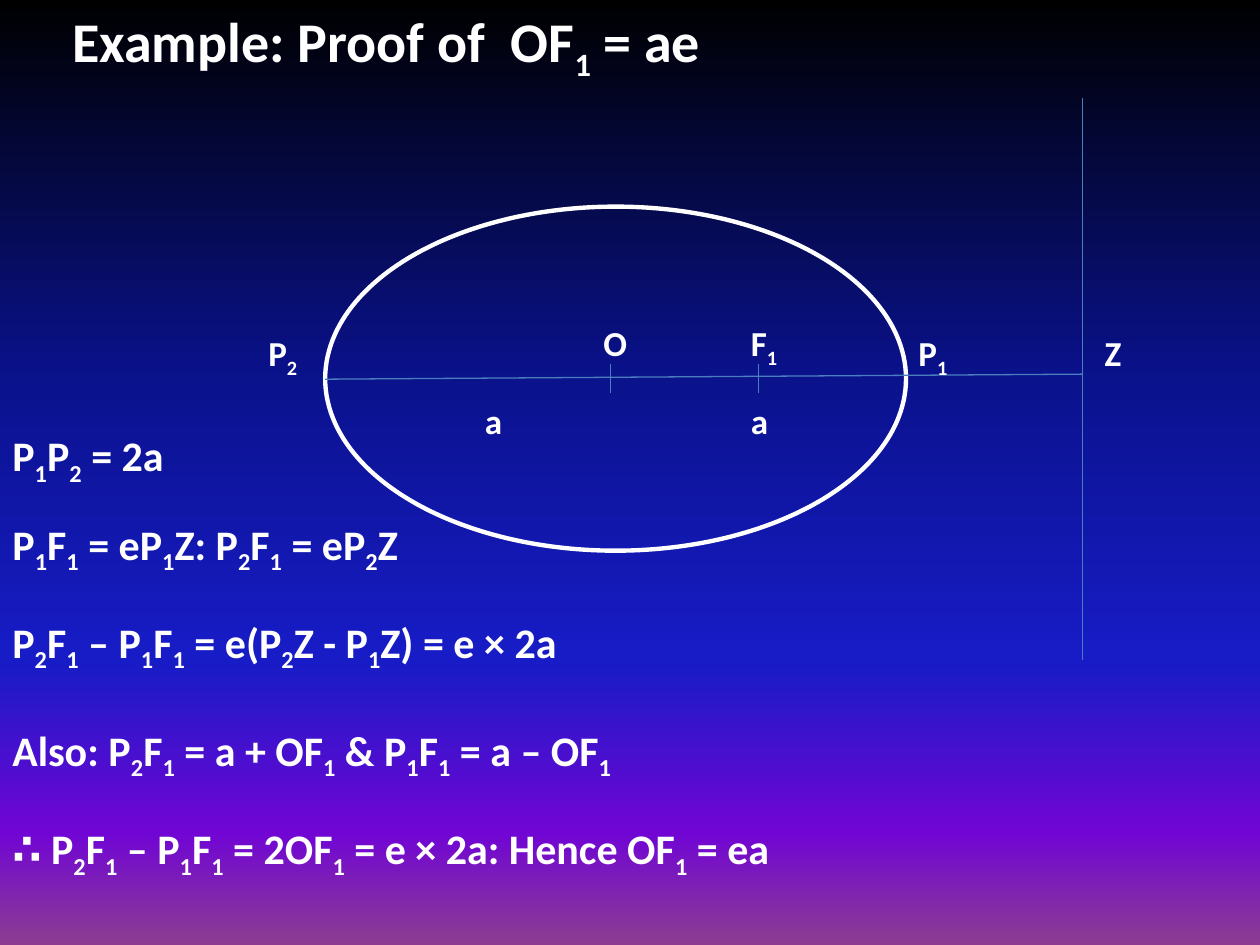
from dataclasses import dataclass

from lxml import etree
from pptx import Presentation
from pptx import util as u
from pptx.dml.color import RGBColor
from pptx.enum import shapes, text
from pptx.oxml.ns import qn


@dataclass(frozen=True)
class Theme:
    font: str = "Calibri"
    ink: str = "FFFFFF"
    rule: str = "4B7EBC"
    title_size: float = 32
    step_size: float = 24
    label_size: float = 20
    outline: float = 2.5
    hairline: float = 0.75
    # (position in percent, colour), from top to bottom
    backdrop: tuple = ((0, "000000"), (40, "0A128C"), (70, "181CC7"),
                       (88, "7005D4"), (100, "8C3D91"))


@dataclass(frozen=True)
class Label:
    """Text at a place; an underscore lowers the character after it."""
    words: str
    left: float
    top: float
    width: float


@dataclass(frozen=True)
class Segment:
    x1: float
    y1: float
    x2: float
    y2: float


THEME = Theme()

TITLE = Label("Example: Proof of  OF_1 = ae", 34, 0, 378)

POINT_LABELS = [
    Label("O", 337.7, 180, 28),
    Label("F_1", 422, 180, 30.5),
    Label("P_1", 517.7, 185.8, 32.5),
    Label("P_2", 146.2, 185.8, 32.5),
    Label("Z", 624.2, 185.8, 24.5),
    Label("a", 270, 224.6, 24.5),
    Label("a", 422, 224.6, 24.5),
]

PROOF_STEPS = [
    Label("P_1P_2 = 2a", 0, 242, 103.7),
    Label("P_1F_1 = eP_1Z: P_2F_1 = eP_2Z", 0, 292.5, 243.4),
    Label("P_2F_1 – P_1F_1 = e(P_2Z - P_1Z) = e × 2a", 0, 348.5, 352),
    Label("Also: P_2F_1 = a + OF_1 & P_1F_1 = a – OF_1", 0, 410.4, 398.2),
    Label("∴ P_2F_1 – P_1F_1 = 2OF_1 = e × 2a: Hence OF_1 = ea", 0, 466.5, 466.6),
]

DIRECTRIX = Segment(618.5, 56.2, 618.5, 377.3)
AXIS = Segment(185.8, 216.7, 618.5, 213.8)
TICKS = [Segment(x, 208.1, x, 224.6) for x in (348.8, 433.4)]


def paint_backdrop(s) -> None:
    fill = s.background.fill
    fill.gradient()
    fill.gradient_angle = 270
    stops = next(s.element.iter(qn("a:gsLst")))
    for old in list(stops):
        stops.remove(old)
    for percent, colour in THEME.backdrop:
        gs = etree.SubElement(stops, qn("a:gs"), pos=str(percent * 1000))
        etree.SubElement(gs, qn("a:srgbClr"), val=colour)


def write(tf, words: str, *, size: float, colour: str = THEME.ink,
          bold: bool = True) -> None:
    """Fill a frame with one line, lowering marked characters."""
    tf.word_wrap = False
    tf.auto_size = text.MSO_AUTO_SIZE.SHAPE_TO_FIT_TEXT
    tf.vertical_anchor = text.MSO_ANCHOR.TOP
    p = tf.paragraphs[0]
    p.alignment = text.PP_ALIGN.LEFT
    first, *rest = words.split("_")
    pieces = [(first, False)]
    for part in rest:
        pieces += [(part[0], True), (part[1:], False)]
    for piece, lowered in pieces:
        if not piece:
            continue
        r = p.add_run()
        r.text = piece
        r.font.name = THEME.font
        r.font.size = u.Pt(size)
        r.font.bold = bold
        r.font.color.rgb = RGBColor.from_string(colour)
        if lowered:
            r._r.get_or_add_rPr().set("baseline", "-25000")


def add_label(s, label: Label, size: float, height: float) -> None:
    sp = s.shapes.add_textbox(u.Pt(label.left), u.Pt(label.top),
                              u.Pt(label.width), u.Pt(height))
    write(sp.text_frame, label.words, size=size)


def add_segment(s, seg: Segment) -> None:
    line = s.shapes.add_connector(shapes.MSO_CONNECTOR.STRAIGHT,
                                  u.Pt(seg.x1), u.Pt(seg.y1),
                                  u.Pt(seg.x2), u.Pt(seg.y2))
    line.line.color.rgb = RGBColor.from_string(THEME.rule)
    line.line.width = u.Pt(THEME.hairline)
    etree.SubElement(line._element.spPr, qn("a:effectLst"))


def add_ellipse(s) -> None:
    sp = s.shapes.add_shape(shapes.MSO_SHAPE.OVAL, u.Pt(185.8), u.Pt(118.1),
                            u.Pt(331.9), u.Pt(196.6))
    sp.shadow.inherit = False
    sp.fill.background()
    sp.line.color.rgb = RGBColor.from_string(THEME.ink)
    sp.line.width = u.Pt(THEME.outline)


def main() -> None:
    prs = Presentation()
    prs.slide_width, prs.slide_height = u.Pt(720), u.Pt(540)
    s = prs.slides.add_slide(prs.slide_layouts[5])
    paint_backdrop(s)

    # Title
    title = s.shapes.title
    title.left, title.top = u.Pt(TITLE.left), u.Pt(TITLE.top)
    title.width, title.height = u.Pt(TITLE.width), u.Pt(46)
    write(title.text_frame, TITLE.words, size=THEME.title_size)

    # Ellipse with its axis, directrix and marked points
    add_ellipse(s)
    for seg in (DIRECTRIX, AXIS, *TICKS):
        add_segment(s, seg)
    for label in POINT_LABELS:
        add_label(s, label, THEME.label_size, 31.5)

    # Steps of the proof
    for step in PROOF_STEPS:
        add_label(s, step, THEME.step_size, 36.3)

    prs.save("out.pptx")


if __name__ == "__main__":
    main()
